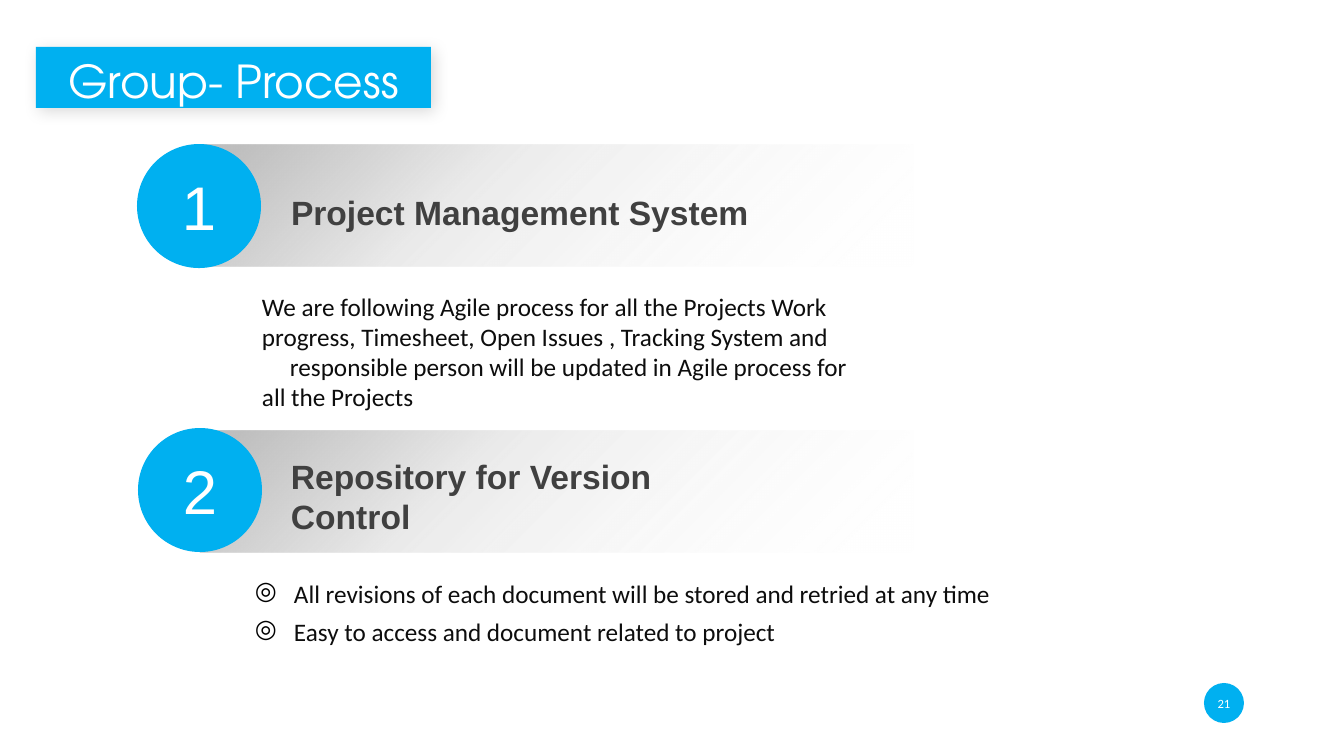
from pptx import Presentation
from pptx.dml.color import RGBColor
from pptx.enum.shapes import MSO_SHAPE as Shape
from pptx.enum.text import MSO_ANCHOR as Anchor, PP_ALIGN as Align
from pptx.oxml import parse_xml
from pptx.util import Pt

EMU_PER_PX = 914400 / 100.8
DRAWING = 'xmlns:a="http://schemas.openxmlformats.org/drawingml/2006/main"'
THEME = {
    "accent": RGBColor.from_string("00B0F0"),
    "title": {"name": "TeX Gyre Adventor", "size": Pt(32.4), "color": "FFFFFF"},
    "heading": {"name": "Arial", "size": Pt(24), "bold": True, "color": "404040"},
    "number": {"name": "Arial", "size": Pt(44), "color": "FFFFFF"},
    "body": {"name": "Calibri", "size": Pt(18), "color": "0D0D0D"},
    "page": {"name": "Calibri", "size": Pt(9), "color": "FFFFFF"},
    "band": [(5, "BFBFBF", 100), (37, "BFBFBF", 31), (100, "FFFFFF", 0)],
}


def px(*lengths):
    """Turn whole pixels into a list of EMU lengths."""
    return [round(length * EMU_PER_PX) for length in lengths]


def add_item(box, lines, style=None, preset=None, align=Align.LEFT,
             anchor=Anchor.MIDDLE, insets=(10, 5, 10, 5)):
    """Add an accent-filled preset shape, or a text box when no preset is given."""
    if preset is None:
        shape = slide.shapes.add_textbox(*px(*box))
    else:
        shape = slide.shapes.add_shape(preset, *px(*box))
        shape.shadow.inherit = False
        shape.fill.solid()
        shape.fill.fore_color.rgb = THEME["accent"]
        shape.line.fill.background()
    frame = shape.text_frame
    left, top, right, bottom = px(*insets)
    frame_format = {"word_wrap": True, "vertical_anchor": anchor, "margin_left": left,
                    "margin_top": top, "margin_right": right, "margin_bottom": bottom}
    for name, value in frame_format.items():
        setattr(frame, name, value)
    for index, line in enumerate(lines):
        paragraph = frame.add_paragraph() if index else frame.paragraphs[0]
        paragraph.alignment = align
        run = paragraph.add_run()
        run.text = line
        for name, value in THEME[style].items():
            if name == "color":
                run.font.color.rgb = RGBColor.from_string(value)
            else:
                setattr(run.font, name, value)
    return shape


presentation = Presentation()
presentation.slide_width, presentation.slide_height = px(1344, 756)
slide = presentation.slides.add_slide(presentation.slide_layouts[6])

# Title bar with a soft shadow
title = add_item((36, 47, 395, 61), ["Group- Process"], "title", Shape.RECTANGLE,
                 Align.CENTER, insets=(20, 5, 20, 0))
title.shadow.inherit = True
title._element.spPr.append(parse_xml(
    f'<a:effectLst {DRAWING}><a:outerShdw blurRad="{Pt(12)}" dist="{Pt(3)}" dir="2700000" '
    'algn="ctr" rotWithShape="0"><a:srgbClr val="000000"><a:alpha val="14000"/></a:srgbClr>'
    '</a:outerShdw></a:effectLst>'))

# Numbered sections: fading band, heading and circle
stops = "".join(
    f'<a:gs pos="{position * 1000}"><a:srgbClr val="{color}">'
    f'<a:alpha val="{alpha * 1000}"/></a:srgbClr></a:gs>'
    for position, color, alpha in THEME["band"])
gradient = (f'<a:gradFill {DRAWING} rotWithShape="1"><a:gsLst>{stops}</a:gsLst>'
            '<a:lin ang="2700000" scaled="0"/></a:gradFill>')
sections = [
    ("1", "Project Management System", 145, (281, 187, 578, 50), (137, 144)),
    ("2", "Repository for Version Control", 431, (281, 449, 496, 94), (138, 428)),
]
for number, heading, band_top, heading_box, circle_corner in sections:
    band = add_item((201, band_top, 713, 122), [], preset=Shape.RECTANGLE)
    properties = band._element.spPr
    properties.replace(properties.solidFill, parse_xml(gradient))
    add_item(heading_box, [heading], "heading")
    add_item((*circle_corner, 124, 124), [number], "number", Shape.OVAL,
             Align.CENTER, insets=(8, 10, 8, 10))

# Process description
description = add_item((252, 286, 611, 132), [
    "We are following Agile process for all the Projects Work progress, Timesheet, "
    "Open Issues , Tracking System and",
    "responsible person will be updated in Agile process for all the Projects",
], "body", anchor=Anchor.TOP)
indented = description.text_frame.paragraphs[1]._p.get_or_add_pPr()
indented.set("indent", str(px(28)[0]))

# Repository benefits
benefits = add_item((234, 568, 781, 75), [
    "All revisions of each document will be stored and retried at any time",
    "Easy to access and document related to project",
], "body", anchor=Anchor.TOP, insets=(10, 10, 10, 10))
margin, hanging = px(50, -39)
for paragraph in benefits.text_frame.paragraphs:
    paragraph.space_before = Pt(6)
    properties = paragraph._p.get_or_add_pPr()
    properties.set("marL", str(margin))
    properties.set("indent", str(hanging))
    for bullet in ('<a:buClr {}><a:srgbClr val="000000"/></a:buClr>', '<a:buChar {} char="◎"/>'):
        properties.append(parse_xml(bullet.format(DRAWING)))

add_item((1204, 683, 40, 40), ["21"], "page", Shape.FLOWCHART_CONNECTOR,
         Align.CENTER, insets=(0, 5, 0, 5))

presentation.save("out.pptx")
